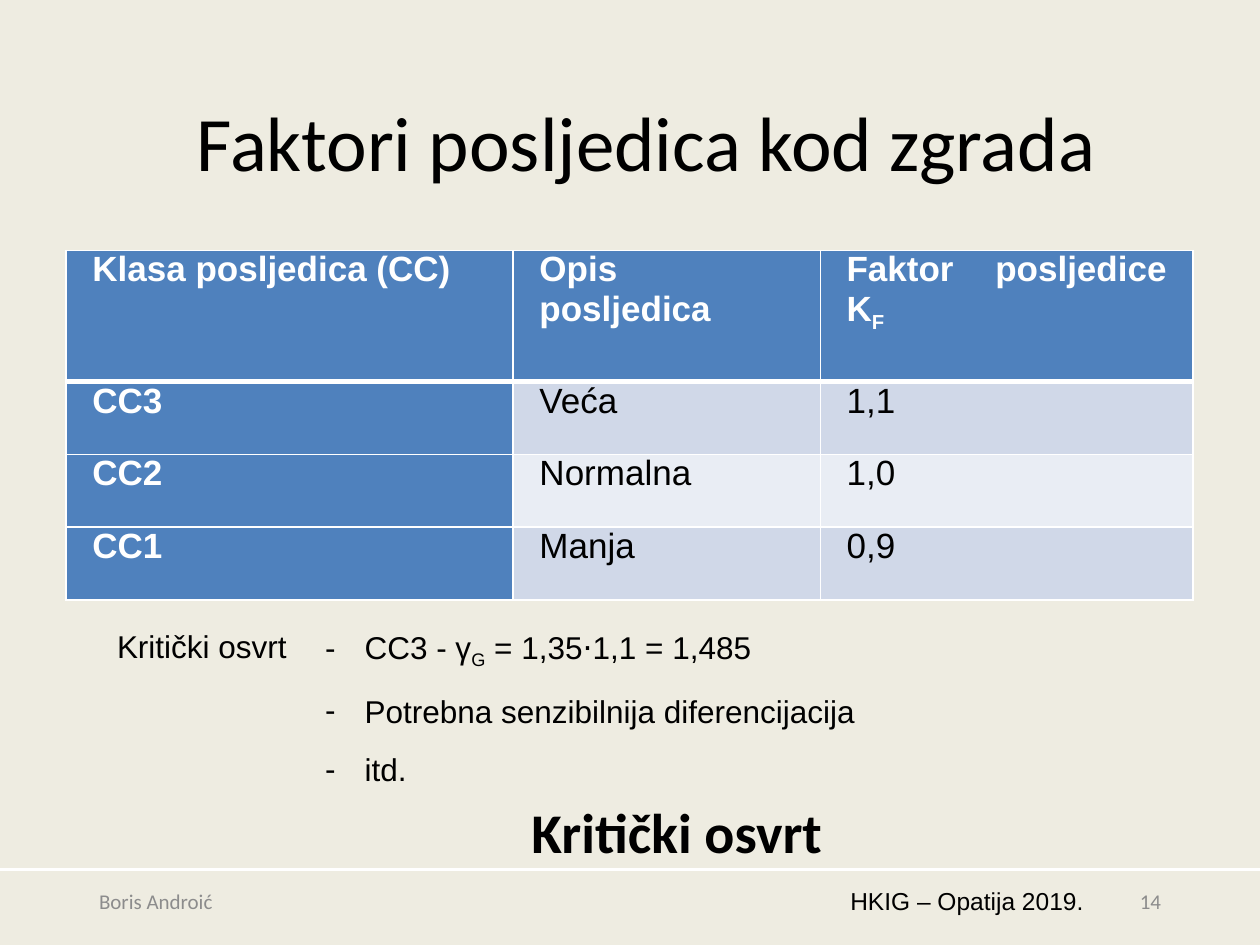
from lxml import etree
from pptx import Presentation
from pptx.dml.color import RGBColor
from pptx.enum.shapes import MSO_CONNECTOR
from pptx.enum.text import MSO_ANCHOR, PP_ALIGN
from pptx.oxml.ns import qn
from pptx.util import Pt

STRAIGHT = MSO_CONNECTOR.STRAIGHT
TOP, MIDDLE = MSO_ANCHOR.TOP, MSO_ANCHOR.MIDDLE
LEFT, CENTER = PP_ALIGN.LEFT, PP_ALIGN.CENTER
RIGHT, JUSTIFY = PP_ALIGN.RIGHT, PP_ALIGN.JUSTIFY

CREAM = RGBColor(0xEE, 0xEC, 0xE1)
WHITE = RGBColor(0xFF, 0xFF, 0xFF)
BLACK = RGBColor(0, 0, 0)
GREY = RGBColor(0x8C, 0x8C, 0x8C)
BLUE = RGBColor(0x4F, 0x81, 0xBD)
BANDS = (RGBColor(0xD0, 0xD8, 0xE8), RGBColor(0xE9, 0xED, 0xF4))

FACTORS = [
    ["Klasa posljedica (CC)", "Opis posljedica", ["Faktor posljedice K", "F"]],
    ["CC3", "Veća", "1,1"],
    ["CC2", "Normalna", "1,0"],
    ["CC1", "Manja", "0,9"],
]
REMARKS = [
    ["CC3 - γ", "G", " = 1,35⋅1,1 = 1,485"],
    "Potrebna senzibilnija diferencijacija",
    "itd.",
]


class SlideBuilder:
    sans = "Arial"
    heading = "Calibri"

    def __init__(self, slide):
        self.slide = slide
        slide.background.fill.solid()
        slide.background.fill.fore_color.rgb = CREAM

    def place(self, shape, box):
        shape.left, shape.top, shape.width, shape.height = map(Pt, box)

    def set_text(self, paragraph, text, size, font, color=BLACK, bold=False, align=LEFT):
        parts = [text] if isinstance(text, str) else text
        for index, part in enumerate(parts):
            run = paragraph.add_run()
            run.text = part
            if index % 2:
                run.font._element.set("baseline", "-25000")
        paragraph.alignment = align
        style = paragraph.font
        style.size, style.name, style.bold = Pt(size), font, bold
        style.color.rgb = color

    def title(self, text, box):
        title = self.slide.shapes.title
        self.place(title, box)
        title.text_frame.vertical_anchor = MIDDLE
        paragraph = title.text_frame.paragraphs[0]
        paragraph.line_spacing = 0.9
        self.set_text(paragraph, text, 44, self.heading, align=CENTER)

    def dash_list(self, items, box, indent=22.5):
        body = self.slide.placeholders[1]
        self.place(body, box)
        frame = body.text_frame
        frame.word_wrap = False
        for index, item in enumerate(items):
            paragraph = frame.add_paragraph() if index else frame.paragraphs[0]
            properties = paragraph._p.get_or_add_pPr()
            properties.set("marL", str(Pt(indent)))
            properties.set("indent", str(Pt(-indent)))
            etree.SubElement(properties, qn("a:buFont"), typeface=self.sans)
            etree.SubElement(properties, qn("a:buChar"), char="-")
            paragraph.space_before = Pt(12 if index else 0)
            self.set_text(paragraph, item, 18, self.sans)

    def label(self, text, box, size, font, anchor=TOP, wrap=False, after=0, **style):
        frame = self.slide.shapes.add_textbox(*map(Pt, box)).text_frame
        frame.word_wrap = wrap
        frame.vertical_anchor = anchor
        paragraph = frame.paragraphs[0]
        paragraph.space_after = Pt(after)
        self.set_text(paragraph, text, size, font, **style)

    def rule(self, x1, y1, x2, y2):
        line = self.slide.shapes.add_connector(STRAIGHT, *map(Pt, (x1, y1, x2, y2)))
        line.line.color.rgb = WHITE
        line.line.width = Pt(1.5)
        etree.SubElement(line._element.spPr, qn("a:effectLst"))

    def border(self, cell, side, width):
        line = etree.SubElement(
            cell._tc.get_or_add_tcPr(), qn(f"a:ln{side}"), w=str(Pt(width)))
        fill = etree.SubElement(line, qn("a:solidFill"))
        etree.SubElement(fill, qn("a:srgbClr"), val=str(WHITE))

    def table(self, rows, left, top, widths, heights):
        box = (left, top, sum(widths), sum(heights))
        table = self.slide.shapes.add_table(
            len(rows), len(widths), *map(Pt, box)).table
        for column, width in zip(table.columns, widths):
            column.width = Pt(width)
        for r, (row, height) in enumerate(zip(rows, heights)):
            table.rows[r].height = Pt(height)
            for c, text in enumerate(row):
                cell = table.cell(r, c)
                strong = r == 0 or c == 0
                for side in "LRTB":
                    at_header = (r, side) in ((0, "B"), (1, "T"))
                    self.border(cell, side, 3 if at_header else 1)
                cell.fill.solid()
                cell.fill.fore_color.rgb = BLUE if strong else BANDS[(r - 1) % 2]
                cell.margin_left = cell.margin_right = Pt(15)
                cell.margin_top = cell.margin_bottom = Pt(0)
                self.set_text(cell.text_frame.paragraphs[0], text, 20, self.sans,
                              WHITE if strong else BLACK, strong, JUSTIFY)


def main():
    deck = Presentation()
    deck.slide_width, deck.slide_height = Pt(720), Pt(540)
    page = SlideBuilder(deck.slides.add_slide(deck.slide_layouts[1]))

    page.rule(0, 496.8, 720, 496.8)
    page.label("HKIG – Opatija 2019.", (473, 502.5, 153.4, 37.5), 14, page.sans,
               wrap=True, align=RIGHT)
    page.title("Faktori posljedica kod zgrada", (38.2, 54.7, 662.4, 58.3))
    footer = {"size": 12, "font": page.heading, "anchor": MIDDLE,
              "wrap": True, "after": 6, "color": GREY}
    page.label("Boris Androić", (49.5, 500.5, 162, 28.8), **footer)
    page.label("14", (508.5, 500.5, 162, 28.8), align=RIGHT, **footer)
    page.table(FACTORS, 37.8, 143, (255.5, 175.5, 213), (75, 41.6, 41.6, 41.6))
    page.dash_list(REMARKS, (178.6, 355, 319.7, 97.2))
    page.label("Kritički osvrt", (59.8, 355, 112.3, 28.8), 18, page.sans)
    page.label("Kritički osvrt", (296.6, 452.2, 182.9, 46), 32, page.heading, bold=True)

    deck.save("out.pptx")


if __name__ == "__main__":
    main()
